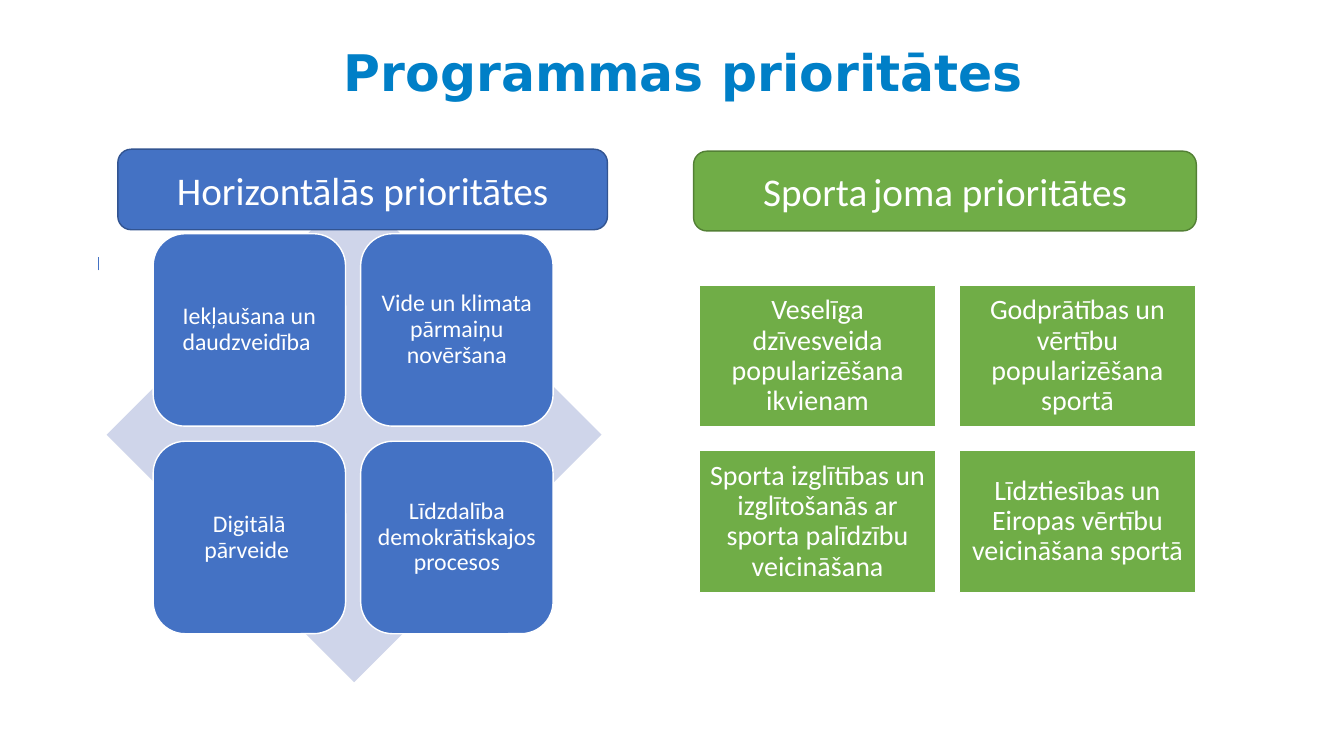
import pptx
import pptx.util
import pptx.dml.color
import pptx.enum.shapes
import pptx.enum.text
import lxml.etree

Cm = pptx.util.Cm
Pt = pptx.util.Pt
KIND = pptx.enum.shapes.MSO_SHAPE

TITLE = "Programmas prioritātes"
GRIDS = [
    dict(
        texts=["Iekļaušana un daudzveidība ", "Vide un klimata pārmaiņu novēršana",
               "Digitālā pārveide ", "Līdzdalība demokrātiskajos procesos"],
        back=(2.69, 4.72, 12.47, 12.47), start=(3.86, 5.89), size=(4.85, 4.85),
        step=(5.23, 5.23), kind=KIND.ROUNDED_RECTANGLE, fill="blue", type="tile", inset=0.18),
    dict(
        texts=["Veselīga dzīvesveida popularizēšana ikvienam",
               "Godprātības un vērtību popularizēšana sportā",
               "Sporta izglītības un izglītošanās ar sporta palīdzību veicināšana",
               "Līdztiesības un Eiropas vērtību veicināšana sportā"],
        back=None, start=(17.63, 7.19), size=(5.95, 3.57),
        step=(6.55, 4.17), kind=KIND.RECTANGLE, fill="green", type="card", inset=0.2),
]
HEADS = [
    (["Horizontālās prioritātes"], (2.97, 3.76, 12.34, 2.03), "blue", "navy"),
    (["Sporta", " ", "joma prioritātes"], (17.48, 3.81, 12.67, 2.01), "green", "moss"),
]
THEME = dict(
    colors=dict(title="007FC7", blue="4472C4", green="70AD47", pale="CFD5EA",
                navy="325491", moss="538035", ink="2F5597", white="FFFFFF"),
    sizes=dict(title=36, head=28, card=20, gap=18, tile=17),
    fonts=dict(title="DejaVu Sans", body="Calibri"),
)


def color(name):
    return pptx.dml.color.RGBColor.from_string(THEME["colors"][name])


def style(run, size, tint="white", font="body", bold=False):
    run.font.size = Pt(THEME["sizes"][size])
    run.font.name = THEME["fonts"][font]
    run.font.bold = bold
    run.font.color.rgb = color(tint)


def center(frame, space=1.0):
    frame.word_wrap = True
    frame.vertical_anchor = pptx.enum.text.MSO_ANCHOR.MIDDLE
    frame.paragraphs[0].alignment = pptx.enum.text.PP_ALIGN.CENTER
    frame.paragraphs[0].line_spacing = space


def draw(shapes, kind, box, fill, line=None):
    shape = shapes.add_shape(kind, *map(Cm, box))
    shape.shadow.inherit = False
    shape.fill.solid()
    shape.fill.fore_color.rgb = color(fill)
    if line:
        shape.line.color.rgb = color(line)
        shape.line.width = Pt(1)
    else:
        shape.line.fill.background()
    return shape


def add_grid(slide, grid):
    shapes = slide.shapes.add_group_shape().shapes
    if grid["back"]:
        draw(shapes, KIND.DIAMOND, grid["back"], "pale")
    for index, text in enumerate(grid["texts"]):
        row, col = divmod(index, 2)
        left = grid["start"][0] + col * grid["step"][0]
        top = grid["start"][1] + row * grid["step"][1]
        tile = draw(shapes, grid["kind"], (left, top, *grid["size"]), grid["fill"], "white")
        frame = tile.text_frame
        frame.text = text
        center(frame, 0.9)
        frame.margin_left = frame.margin_right = Cm(grid["inset"])
        frame.margin_top = frame.margin_bottom = Cm(grid["inset"])
        style(frame.paragraphs[0].runs[0], grid["type"])


def add_head(slide, parts, box, fill, line):
    frame = draw(slide.shapes, KIND.ROUNDED_RECTANGLE, box, fill, line).text_frame
    center(frame)
    for part in parts:
        run = frame.paragraphs[0].add_run()
        run.text = part
        if part == " ":
            style(run, "gap", "ink", bold=True)
        else:
            style(run, "head")


def add_title(slide):
    title = slide.shapes.title
    title.left, title.top, title.width, title.height = map(Cm, (4.32, 0.56, 25.81, 2.67))
    title.text_frame.text = TITLE
    center(title.text_frame, 0.9)
    style(title.text_frame.paragraphs[0].runs[0], "title", "title", "title", True)


def add_tick(slide):
    tick = slide.shapes.add_connector(
        pptx.enum.shapes.MSO_CONNECTOR.STRAIGHT, Cm(2.49), Cm(6.81), Cm(2.49), Cm(6.48))
    tick.line.color.rgb = color("blue")
    tick.line.width = Pt(0.5)
    lxml.etree.SubElement(tick.element.spPr, pptx.oxml.ns.qn("a:effectLst"))


def main():
    deck = pptx.Presentation()
    deck.slide_width, deck.slide_height = Cm(33.87), Cm(19.05)
    slide = deck.slides.add_slide(deck.slide_layouts[5])
    add_title(slide)
    for grid in GRIDS:
        add_grid(slide, grid)
    for head in HEADS:
        add_head(slide, *head)
    add_tick(slide)
    deck.save("out.pptx")


if __name__ == "__main__":
    main()
